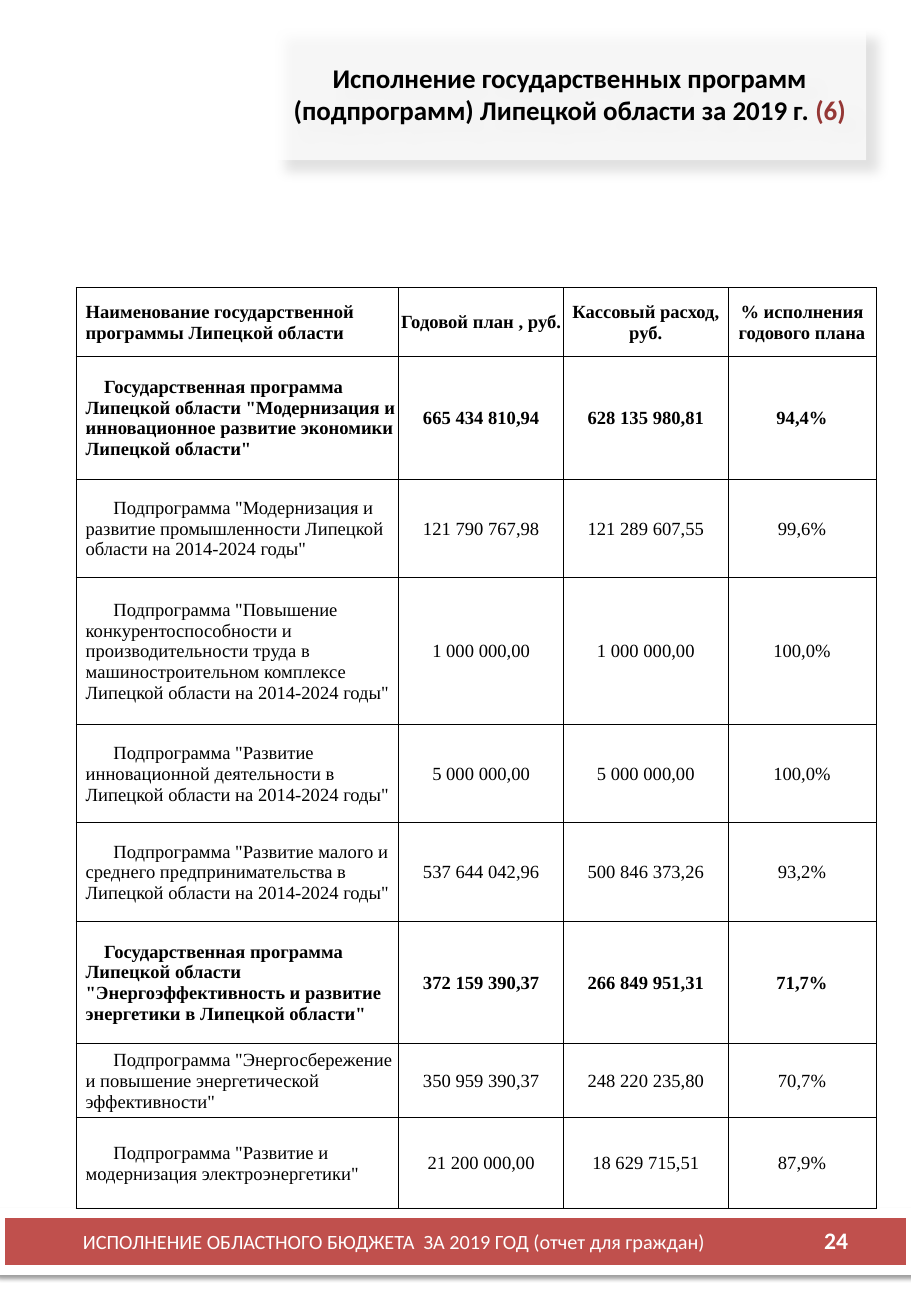
import pptx
import pptx.util
import pptx.dml.color
import pptx.enum.shapes
import pptx.enum.text
import pptx.oxml
import pptx.oxml.ns

Pt = pptx.util.Pt
Align = pptx.enum.text.PP_ALIGN
Middle = pptx.enum.text.MSO_ANCHOR.MIDDLE
Rect = pptx.enum.shapes.MSO_SHAPE.RECTANGLE
ns = pptx.oxml.ns.nsdecls("a")
hues = {"black": "000000", "white": "FFFFFF", "red": "C0504D", "wine": "953735"}


def write(frame, runs, align, form):
    """Fill the first paragraph with (text, colour) runs."""
    frame.word_wrap = True
    frame.vertical_anchor = Middle
    par = frame.paragraphs[0]
    par.alignment = align
    for text, hue in runs:
        run = par.add_run()
        run.text = text
        for key, value in form.items():
            setattr(run.font, key, value)
        run.font.color.rgb = pptx.dml.color.RGBColor.from_string(hues[hue])
    return par


def panel(box, hue, alpha, blur, dist, angle, shade):
    """Draw a filled rectangle with an outer shadow."""
    shape = deck.shapes.add_shape(Rect, *map(Pt, box))
    shape.fill.solid()
    shape.fill.fore_color.rgb = pptx.dml.color.RGBColor.from_string(hues[hue])
    if alpha < 100:
        tint = shape.fill._xPr.find(".//" + pptx.oxml.ns.qn("a:srgbClr"))
        tint.append(pptx.oxml.parse_xml(f'<a:alpha {ns} val="{alpha * 1000}"/>'))
    shape.line.fill.background()
    shape.shadow.inherit = False
    glow = shape._element.spPr.find(pptx.oxml.ns.qn("a:effectLst"))
    glow.append(pptx.oxml.parse_xml(
        f'<a:outerShdw {ns} blurRad="{Pt(blur)}" dist="{Pt(dist)}" '
        f'dir="{angle * 60000}" algn="tl" rotWithShape="0">'
        f'<a:srgbClr val="{hues["black"]}"><a:alpha val="{shade * 1000}"/>'
        '</a:srgbClr></a:outerShdw>'))
    return shape


prs = pptx.Presentation()
prs.slide_width, prs.slide_height = Pt(540), Pt(779.76)
deck = prs.slides.add_slide(prs.slide_layouts[6])

# Footer bar
bar = panel((0, 718.6, 540, 33.8), "red", 100, 3.1, 1.6, 90, 38)
bar.line.color.rgb = pptx.dml.color.RGBColor.from_string(hues["white"])
bar.line.width = Pt(6)

# Title
title = panel((162, 15.8, 351.4, 79.2), "white", 70, 7, 10, 45, 16)
write(title.text_frame, [
    ("Исполнение государственных программ (подпрограмм) Липецкой области за 2019 г. ", "black"),
    ("(6)", "wine"),
], Align.CENTER, {"name": "Calibri", "size": Pt(16), "bold": True})

# Footer text and page number
for box, text, align, size, bold in [
    ((20.9, 724.3, 425.5, 22.3),
     "ИСПОЛНЕНИЕ ОБЛАСТНОГО БЮДЖЕТА  ЗА 2019 ГОД (отчет для граждан)", Align.CENTER, 12, False),
    ((463, 724.3, 46.8, 20.9), "24", Align.RIGHT, 14, True),
]:
    label = deck.shapes.add_textbox(*map(Pt, box))
    write(label.text_frame, [(text, "white")], align,
          {"name": "Calibri", "size": Pt(size), "bold": bold})

# Table data: height, bold, first-line indent, cells
step = 14.55
rows = [
    (40.6, True, 0, ["Наименование государственной программы Липецкой области",
                     "Годовой план , руб.", "Кассовый расход, руб.", "% исполнения годового плана"]),
    (5 * step, True, 11, [
        'Государственная программа Липецкой области "Модернизация и инновационное развитие экономики Липецкой области"',
        "665 434 810,94", "628 135 980,81", "94,4%"]),
    (4 * step, False, 16.5, [
        'Подпрограмма "Модернизация и развитие промышленности Липецкой области на 2014-2024 годы"',
        "121 790 767,98", "121 289 607,55", "99,6%"]),
    (6 * step, False, 16.5, [
        'Подпрограмма "Повышение конкурентоспособности и производительности труда в '
        'машиностроительном комплексе Липецкой области на 2014-2024 годы"',
        "1 000 000,00", "1 000 000,00", "100,0%"]),
    (4 * step, False, 16.5, [
        'Подпрограмма "Развитие инновационной деятельности в Липецкой области на 2014-2024 годы"',
        "5 000 000,00", "5 000 000,00", "100,0%"]),
    (4 * step, False, 16.5, [
        'Подпрограмма "Развитие малого и среднего предпринимательства в Липецкой области на 2014-2024 годы"',
        "537 644 042,96", "500 846 373,26", "93,2%"]),
    (5 * step, True, 11, [
        'Государственная программа Липецкой области "Энергоэффективность и развитие энергетики в Липецкой области"',
        "372 159 390,37", "266 849 951,31", "71,7%"]),
    (3 * step, False, 16.5, [
        'Подпрограмма "Энергосбережение и повышение энергетической эффективности"',
        "350 959 390,37", "248 220 235,80", "70,7%"]),
    (54, False, 16.5, ['Подпрограмма "Развитие и модернизация электроэнергетики"',
                       "21 200 000,00", "18 629 715,51", "87,9%"]),
]
widths = [191.4, 97.6, 97.6, 87.6]

# Table
grid = deck.shapes.add_table(len(rows), len(widths), Pt(45), Pt(170.5),
                             Pt(sum(widths)), Pt(sum(row[0] for row in rows))).table
grid.first_row = grid.horz_banding = False
for col, width in zip(grid.columns, widths):
    col.width = Pt(width)
for r, (height, bold, indent, texts) in enumerate(rows):
    grid.rows[r].height = Pt(height)
    for c, text in enumerate(texts):
        cell = grid.cell(r, c)
        form = {"margin_left": Pt(0.7 if c else 5.76), "margin_right": Pt(0.7),
                "margin_top": Pt(0.7), "margin_bottom": 0, "vertical_anchor": Middle}
        for key, value in form.items():
            setattr(cell, key, value)
        par = write(cell.text_frame, [(text, "black")], Align.CENTER if c else Align.LEFT,
                    {"name": "Times New Roman", "size": Pt(11), "bold": bold})
        if indent and c == 0:
            par._p.get_or_add_pPr().set("indent", str(Pt(indent)))
        cell.fill.background()
        props = cell._tc.get_or_add_tcPr()
        for i, side in enumerate("LRTB"):
            props.insert(i, pptx.oxml.parse_xml(
                f'<a:ln{side} {ns} w="{Pt(0.5)}"><a:solidFill>'
                f'<a:srgbClr val="{hues["black"]}"/></a:solidFill></a:ln{side}>'))
        # Cell anchor belongs to the cell, not to its text body
        body = cell._tc.txBody.bodyPr
        for key in list(body.attrib):
            del body.attrib[key]

prs.save("out.pptx")
